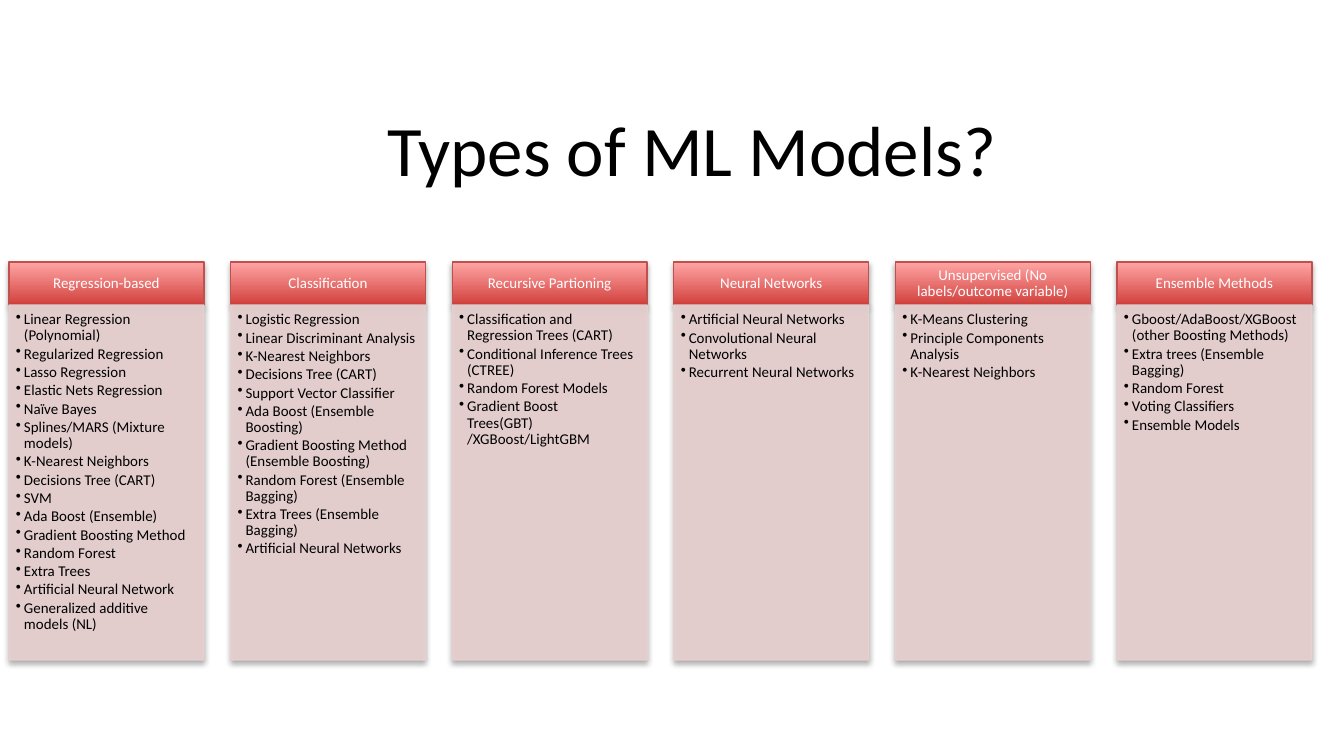
from lxml.etree import SubElement
from pptx import Presentation
from pptx.dml.color import RGBColor
from pptx.enum.shapes import MSO_SHAPE
from pptx.enum.text import MSO_ANCHOR, MSO_AUTO_SIZE, PP_ALIGN
from pptx.oxml.ns import qn
from pptx.util import Emu, Pt

TITLE = "Types of ML Models?"
COLUMNS = [
    ("Regression-based", [
        "Linear Regression (Polynomial)", "Regularized Regression",
        "Lasso Regression", "Elastic Nets Regression", "Naïve Bayes",
        "Splines/MARS (Mixture models)", "K-Nearest Neighbors",
        "Decisions Tree (CART)", "SVM", "Ada Boost (Ensemble)",
        "Gradient Boosting Method", "Random Forest", "Extra Trees",
        "Artificial Neural Network", "Generalized additive models (NL)"]),
    ("Classification", [
        "Logistic Regression", "Linear Discriminant Analysis",
        "K-Nearest Neighbors", "Decisions Tree (CART)",
        "Support Vector Classifier", "Ada Boost (Ensemble Boosting)",
        "Gradient Boosting Method (Ensemble Boosting)",
        "Random Forest (Ensemble Bagging)", "Extra Trees (Ensemble Bagging)",
        "Artificial Neural Networks"]),
    ("Recursive Partioning", [
        "Classification and Regression Trees (CART)",
        "Conditional Inference Trees (CTREE)", "Random Forest Models",
        "Gradient Boost Trees(GBT) /XGBoost/LightGBM"]),
    ("Neural Networks", [
        "Artificial Neural Networks", "Convolutional Neural Networks",
        "Recurrent Neural Networks"]),
    ("Unsupervised (No labels/outcome variable)", [
        "K-Means Clustering", "Principle Components Analysis",
        "K-Nearest Neighbors"]),
    ("Ensemble Methods", [
        "Gboost/AdaBoost/XGBoost (other Boosting Methods)",
        "Extra trees (Ensemble Bagging)", "Random Forest",
        "Voting Classifiers", "Ensemble Models"]),
]

BLACK = RGBColor(0x00, 0x00, 0x00)
WHITE = RGBColor(0xFF, 0xFF, 0xFF)
RED_DEEP = RGBColor(0xD1, 0x40, 0x3C)
RED_LIGHT = RGBColor(0xFF, 0xA6, 0xA5)
RED_LINE = RGBColor(0xC0, 0x50, 0x4D)
PINK = RGBColor(0xE8, 0xD0, 0xD0)

FONT = "Calibri"
LEFT_FIRST, LEFT_LAST, COL_W = 9, 1117, 195
HEAD_TOP, HEAD_H, BODY_H = 262, 43, 355
INDENT = 8


def px(n):
    return Emu(round(n * 914400 / 134.4))


def style(p, size, color):
    for r in p.runs:
        r.font.name, r.font.size = FONT, Pt(size)
        r.font.color.rgb = color


def add_shadow(sp):
    sp.shadow.inherit = False
    effects = sp._element.spPr.find(qn("a:effectLst"))
    shadow = SubElement(effects, qn("a:outerShdw"), blurRad=str(Pt(3.1)),
                        dist=str(Pt(1.8)), dir="5400000", rotWithShape="0")
    color = SubElement(shadow, qn("a:srgbClr"), val=str(BLACK))
    SubElement(color, qn("a:alpha"), val="35000")


def add_box(left, top, height, line, margins):
    sp = slide.shapes.add_shape(MSO_SHAPE.RECTANGLE, px(left), px(top),
                                px(COL_W), px(height))
    sp.line.color.rgb = line
    sp.line.width = Pt(0.75)
    add_shadow(sp)
    tf = sp.text_frame
    tf.word_wrap = True
    tf.margin_left, tf.margin_top, tf.margin_right, tf.margin_bottom = map(px, margins)
    return sp


def add_header(left, text):
    sp = add_box(left, HEAD_TOP, HEAD_H, RED_LINE, (8, 5, 8, 5))
    sp.fill.gradient()
    sp.fill.gradient_angle = 90
    for stop, color in zip(sp.fill.gradient_stops, (RED_DEEP, RED_LIGHT)):
        stop.color.rgb = color
    sp.text_frame.vertical_anchor = MSO_ANCHOR.MIDDLE
    p = sp.text_frame.paragraphs[0]
    p.text = text
    p.alignment = PP_ALIGN.CENTER
    p.line_spacing = 0.9
    style(p, 8, WHITE)


def add_body(left, items):
    sp = add_box(left, HEAD_TOP + HEAD_H, BODY_H, PINK, (7, 7, 8, 9))
    sp.fill.solid()
    sp.fill.fore_color.rgb = PINK
    # Fill and line are slightly see-through
    for color in sp._element.spPr.findall(".//" + qn("a:solidFill") + "/" + qn("a:srgbClr")):
        SubElement(color, qn("a:alpha"), val="90000")
    tf = sp.text_frame
    tf.vertical_anchor = MSO_ANCHOR.TOP
    tf.text = "\n".join(items)
    for p in tf.paragraphs:
        p.alignment = PP_ALIGN.LEFT
        p.line_spacing = 0.9
        p.space_after = Pt(1.2)
        pPr = p._p.get_or_add_pPr()
        pPr.set("marL", str(px(INDENT)))
        pPr.set("indent", str(-px(INDENT)))
        SubElement(pPr, qn("a:buChar"), char="•")
        style(p, 8, BLACK)


prs = Presentation()
prs.slide_width, prs.slide_height = px(1344), px(756)
slide = prs.slides.add_slide(prs.slide_layouts[6])

# Columns of model families
step = (LEFT_LAST - LEFT_FIRST) / (len(COLUMNS) - 1)
for i, (heading, models) in enumerate(COLUMNS):
    left = LEFT_FIRST + i * step
    add_header(left, heading)
    add_body(left, models)

# Title
title = slide.shapes.add_textbox(px(371), px(99), px(642), px(100))
tf = title.text_frame
tf.word_wrap = False
tf.auto_size = MSO_AUTO_SIZE.SHAPE_TO_FIT_TEXT
p = tf.paragraphs[0]
p.text = TITLE
p.alignment = PP_ALIGN.CENTER
style(p, 38, BLACK)

prs.save("out.pptx")
